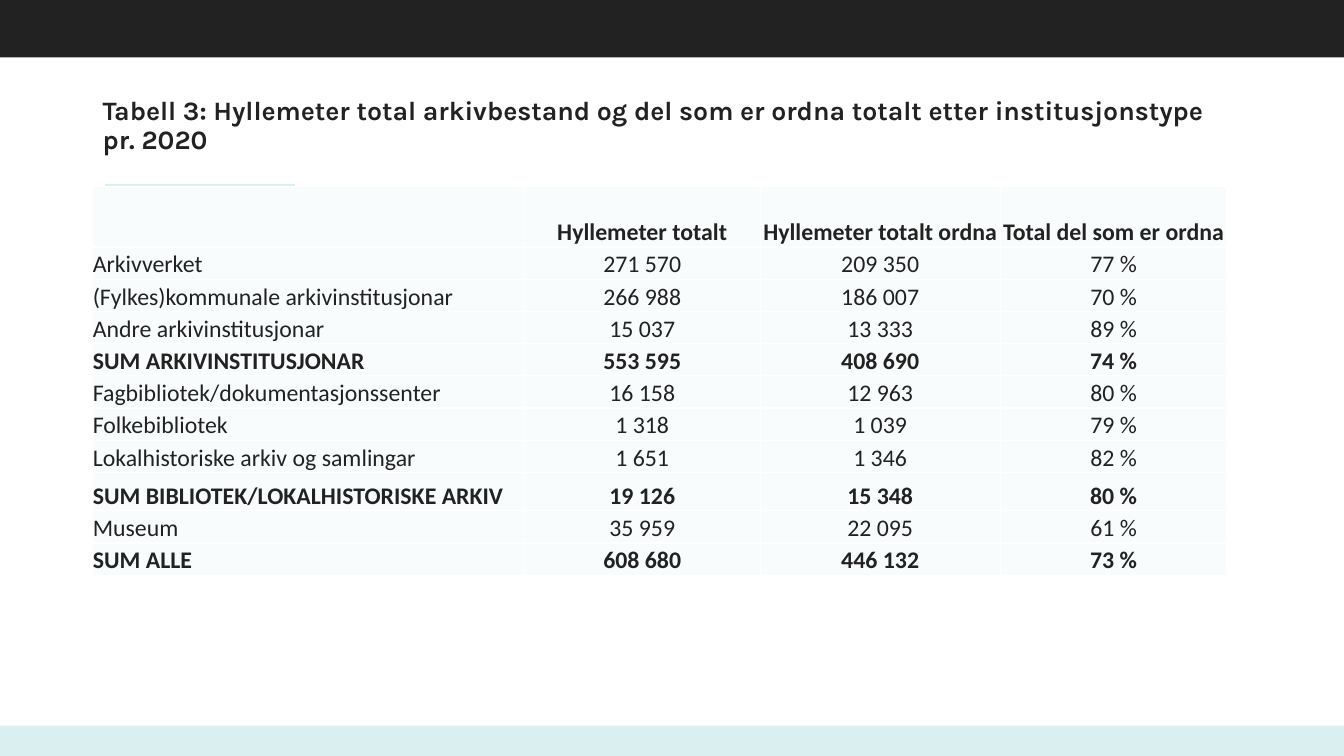
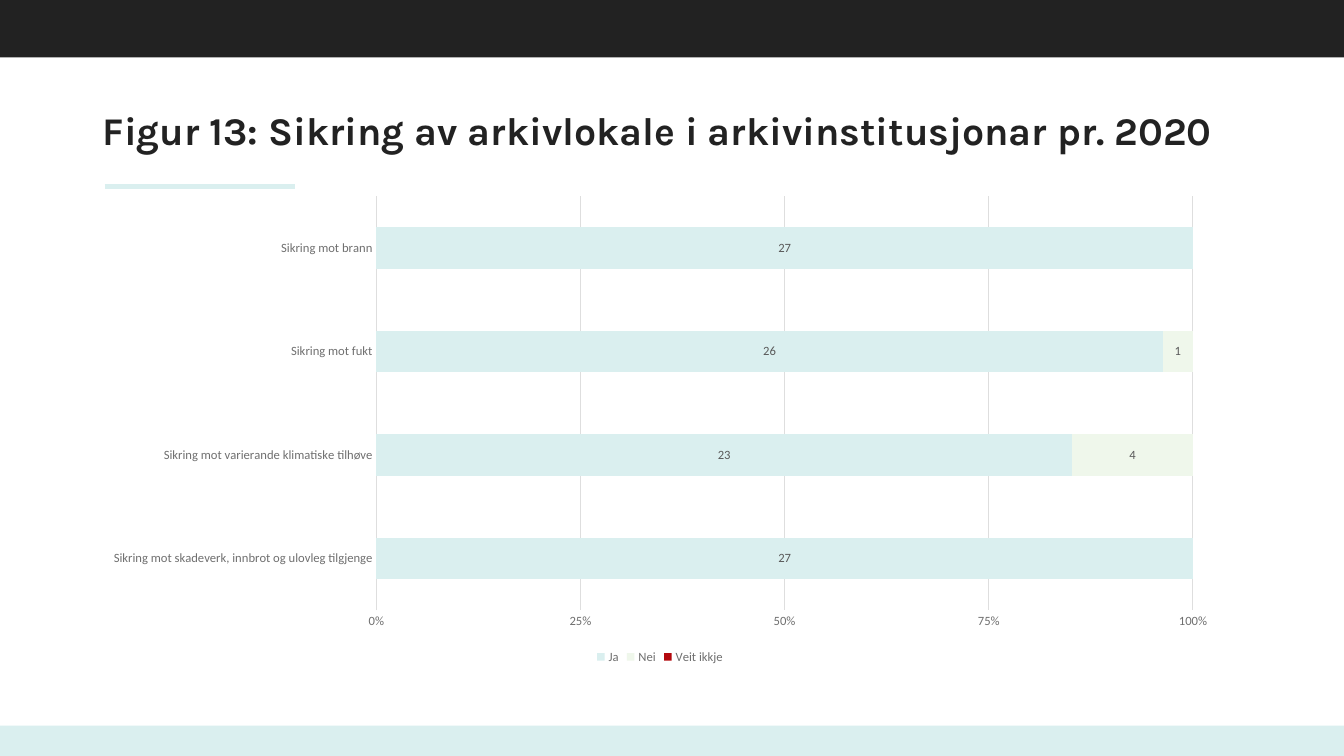
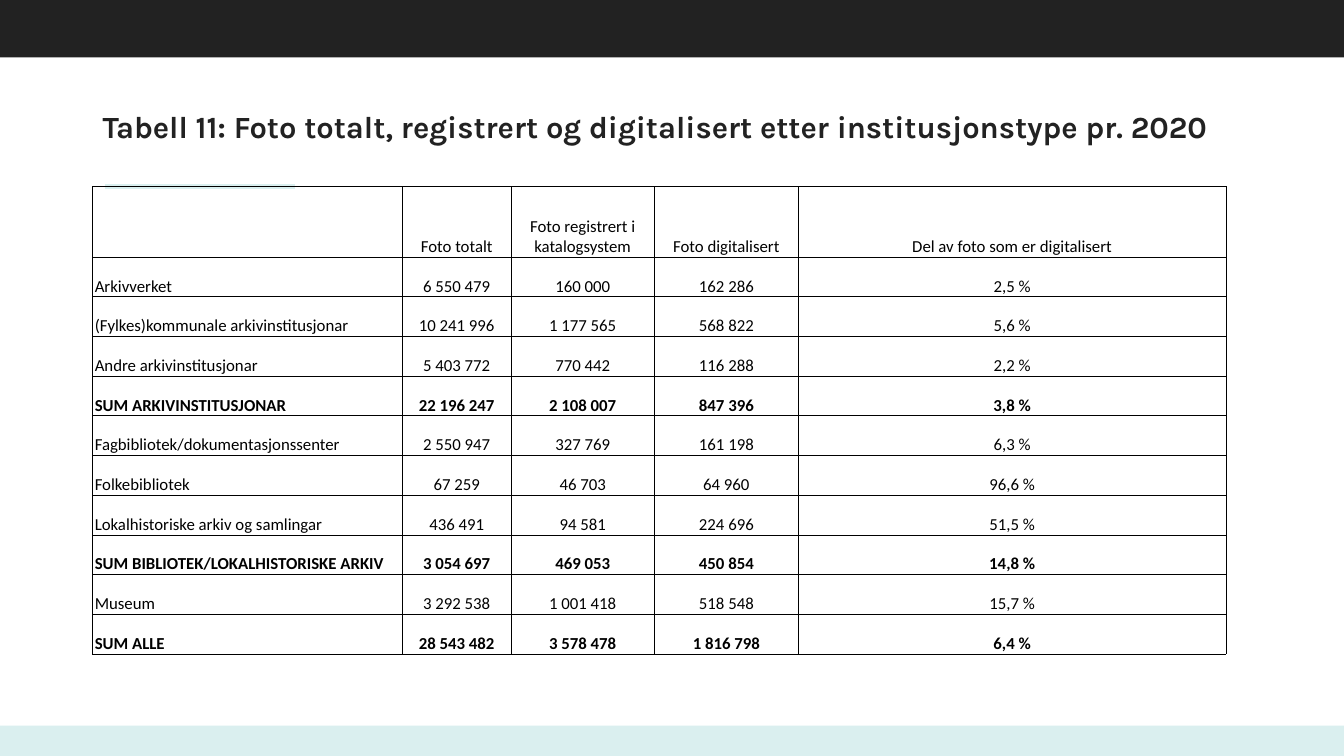
"""Build three slides on archive holdings: two tables and one stacked bar chart."""
from pptx import Presentation
from pptx.chart.data import CategoryChartData
from pptx.dml.color import RGBColor
from pptx.enum.chart import XL_CHART_TYPE, XL_LABEL_POSITION, XL_LEGEND_POSITION, XL_TICK_MARK
from pptx.enum.shapes import MSO_CONNECTOR, MSO_SHAPE
from pptx.enum.text import MSO_ANCHOR, PP_ALIGN
from pptx.oxml import parse_xml
from pptx.oxml.ns import nsdecls, qn
from pptx.util import Inches, Pt

INK = RGBColor(0x22, 0x22, 0x22)
BLACK = RGBColor(0x00, 0x00, 0x00)
WHITE = RGBColor(0xFF, 0xFF, 0xFF)
AQUA = RGBColor(0xDA, 0xEF, 0xEF)
PALE_AQUA = RGBColor(0xF8, 0xFC, 0xFC)
PALE_GREEN = RGBColor(0xEF, 0xF7, 0xEB)
RED = RGBColor(0xB3, 0x08, 0x0D)
AXIS_GREY = RGBColor(0x6F, 0x6F, 0x6F)
LABEL_GREY = RGBColor(0x59, 0x59, 0x59)
GRID_GREY = RGBColor(0xDE, 0xDE, 0xDE)

SLIDE_WIDTH, SLIDE_HEIGHT = 13.33, 7.5
LEFT, CONTENT_TOP = 0.92, 1.85
TOP_BAND, BOTTOM_BAND = 0.57, 0.3
TITLE_LINE_HEIGHT = 1.05

INSTITUTIONS = [
    "Arkivverket",
    "(Fylkes)kommunale arkivinstitusjonar",
    "Andre arkivinstitusjonar",
    "SUM ARKIVINSTITUSJONAR",
    "Fagbibliotek/dokumentasjonssenter",
    "Folkebibliotek",
    "Lokalhistoriske arkiv og samlingar",
    "SUM BIBLIOTEK/LOKALHISTORISKE ARKIV",
    "Museum",
    "SUM ALLE",
]

SHELF_TABLE = {
    "header": ["Hyllemeter totalt", "Hyllemeter totalt ordna", "Total del som er ordna"],
    "rows": [
        ("271 570", "209 350", "77 %"),
        ("266 988", "186 007", "70 %"),
        ("15 037", "13 333", "89 %"),
        ("553 595", "408 690", "74 %"),
        ("16 158", "12 963", "80 %"),
        ("1 318", "1 039", "79 %"),
        ("1 651", "1 346", "82 %"),
        ("19 126", "15 348", "80 %"),
        ("35 959", "22 095", "61 %"),
        ("608 680", "446 132", "73 %"),
    ],
    "widths": [4.28, 2.34, 2.38, 2.25],
    "heights": [0.6] + [0.32] * 7 + [0.38] + [0.32] * 2,
    "font": {"name": "Calibri", "size": Pt(17)},
    "color": INK,
    "bold_header": True,
    "fill": PALE_AQUA,
    "border": (WHITE, 1),
    "inset": 0,
}

PHOTO_TABLE = {
    "header": [
        "Foto totalt",
        "Foto registrert i katalogsystem",
        "Foto digitalisert",
        "Del av foto som er digitalisert",
    ],
    "rows": [
        ("6 550 479", "160 000", "162 286", "2,5 %"),
        ("10 241 996", "1 177 565", "568 822", "5,6 %"),
        ("5 403 772", "770 442", "116 288", "2,2 %"),
        ("22 196 247", "2 108 007", "847 396", "3,8 %"),
        ("2 550 947", "327 769", "161 198", "6,3 %"),
        ("67 259", "46 703", "64 960", "96,6 %"),
        ("436 491", "94 581", "224 696", "51,5 %"),
        ("3 054 697", "469 053", "450 854", "14,8 %"),
        ("3 292 538", "1 001 418", "518 548", "15,7 %"),
        ("28 543 482", "3 578 478", "1 816 798", "6,4 %"),
    ],
    "widths": [3.07, 1.08, 1.42, 1.43, 4.24],
    "heights": [0.7] + [(4.64 - 0.7) / len(INSTITUTIONS)] * len(INSTITUTIONS),
    "font": {"name": "Calibri", "size": Pt(12)},
    "color": BLACK,
    "bold_header": False,
    "fill": None,
    "border": (BLACK, 0.5),
    "inset": 0.02,
}

SECURITY_CATEGORIES = [
    "Sikring mot skadeverk, innbrot og ulovleg tilgjenge",
    "Sikring mot varierande klimatiske tilhøve",
    "Sikring mot fukt",
    "Sikring mot brann",
]
SECURITY_SERIES = [
    ("Ja", (27, 23, 26, 27), AQUA, True),
    ("Nei", (0, 4, 1, 0), PALE_GREEN, True),
    ("Veit ikkje", (0, 0, 0, 0), RED, False),
]
PLOT_LAYOUT = {"x": 0.25, "y": 0.02, "w": 0.72, "h": 0.86}


def apply(target, values):
    for name, value in values.items():
        setattr(target, name, value)


def format_font(font, color, **values):
    apply(font, values)
    font.color.rgb = color


def add_band(slide, top, height, color):
    band = slide.shapes.add_shape(
        MSO_SHAPE.RECTANGLE, 0, Inches(top), Inches(SLIDE_WIDTH), Inches(height)
    )
    band.shadow.inherit = False
    band.fill.solid()
    band.fill.fore_color.rgb = color
    band.line.fill.background()


def add_title(slide, text, size):
    box = slide.shapes.add_textbox(
        Inches(LEFT), Inches(TOP_BAND), Inches(11.5), Inches(CONTENT_TOP - TOP_BAND)
    )
    apply(box.text_frame, {
        "word_wrap": True,
        "vertical_anchor": MSO_ANCHOR.MIDDLE,
        "margin_left": Inches(0.1),
        "margin_right": Inches(0.1),
        "margin_top": Inches(0.05) + Pt(size * TITLE_LINE_HEIGHT),
        "margin_bottom": Inches(0.24),
    })
    paragraph = box.text_frame.paragraphs[0]
    paragraph.text = text
    paragraph.line_spacing = 0.9
    format_font(paragraph.font, INK, name="Karla", size=Pt(size), bold=True)


def add_base_slide(presentation, title, size):
    slide = presentation.slides.add_slide(presentation.slide_layouts[6])
    add_band(slide, SLIDE_HEIGHT - BOTTOM_BAND, BOTTOM_BAND, AQUA)
    add_band(slide, 0, TOP_BAND, INK)
    rule = slide.shapes.add_connector(
        MSO_CONNECTOR.STRAIGHT,
        Inches(1.04), Inches(CONTENT_TOP), Inches(2.93), Inches(CONTENT_TOP),
    )
    rule.line.color.rgb = AQUA
    rule.line.width = Pt(3)
    rule._element.spPr.append(parse_xml(f"<a:effectLst {nsdecls('a')}/>"))
    add_title(slide, title, size)
    return slide


def add_borders(cell, color, width):
    properties = cell._tc.get_or_add_tcPr()
    for side in ("lnL", "lnR", "lnT", "lnB"):
        properties.append(parse_xml(
            f'<a:{side} {nsdecls("a")} w="{Pt(width)}"><a:solidFill>'
            f'<a:srgbClr val="{color}"/></a:solidFill></a:{side}>'
        ))


def format_cell(cell, text, content, centred, bold):
    inset = Inches(content["inset"])
    apply(cell, {
        "vertical_anchor": MSO_ANCHOR.BOTTOM,
        "margin_left": inset,
        "margin_right": inset,
        "margin_top": inset,
        "margin_bottom": 0,
    })
    add_borders(cell, *content["border"])
    if content["fill"] is None:
        cell.fill.background()
    else:
        cell.fill.solid()
        cell.fill.fore_color.rgb = content["fill"]
    paragraph = cell.text_frame.paragraphs[0]
    paragraph.text = text
    paragraph.alignment = PP_ALIGN.CENTER if centred else PP_ALIGN.LEFT
    format_font(paragraph.font, content["color"], bold=bold, **content["font"])


def add_data_table(slide, content):
    grid = [["", *content["header"]]]
    grid += [[name, *values] for name, values in zip(INSTITUTIONS, content["rows"])]
    widths, heights = content["widths"], content["heights"]
    table = slide.shapes.add_table(
        len(grid), len(widths), Inches(LEFT), Inches(CONTENT_TOP),
        Inches(sum(widths)), Inches(sum(heights)),
    ).table
    apply(table, {"first_row": False, "horz_banding": False})
    for column, width in zip(table.columns, widths):
        column.width = Inches(width)
    for row_index, (row, height) in enumerate(zip(grid, heights)):
        table.rows[row_index].height = Inches(height)
        bold = content["bold_header"] if row_index == 0 else row[0].startswith("SUM")
        for column_index, text in enumerate(row):
            cell = table.cell(row_index, column_index)
            format_cell(cell, text, content, column_index > 0, bold)


def set_plot_layout(chart):
    plot_area = chart._chartSpace.chart.plotArea
    for layout in plot_area.findall(qn("c:layout")):
        plot_area.remove(layout)
    modes = "".join(f'<c:{axis}Mode val="edge"/>' for axis in "xy")
    places = "".join(f'<c:{name} val="{value}"/>' for name, value in PLOT_LAYOUT.items())
    plot_area.insert(0, parse_xml(
        f'<c:layout {nsdecls("c")}><c:manualLayout><c:layoutTarget val="inner"/>'
        f"{modes}{places}</c:manualLayout></c:layout>"
    ))


def format_axes(chart):
    for axis in (chart.category_axis, chart.value_axis):
        apply(axis, {
            "major_tick_mark": XL_TICK_MARK.NONE,
            "minor_tick_mark": XL_TICK_MARK.NONE,
        })
        format_font(axis.tick_labels.font, AXIS_GREY, name="Calibri", size=Pt(9))
    value_axis = chart.value_axis
    apply(value_axis, {"minimum_scale": 0, "maximum_scale": 1, "major_unit": 0.25})
    apply(value_axis.tick_labels, {"number_format": "0%", "number_format_is_linked": False})
    value_axis.format.line.fill.background()
    for line in (chart.category_axis.format.line, value_axis.major_gridlines.format.line):
        line.color.rgb = GRID_GREY
        line.width = Pt(0.75)


def add_security_chart(slide):
    data = CategoryChartData()
    data.categories = SECURITY_CATEGORIES
    for name, values, _, _ in SECURITY_SERIES:
        data.add_series(name, values)
    chart = slide.shapes.add_chart(
        XL_CHART_TYPE.BAR_STACKED_100, Inches(LEFT), Inches(CONTENT_TOP),
        Inches(11.25), Inches(4.78), data,
    ).chart
    apply(chart, {"has_title": False, "has_legend": True})
    format_font(chart.font, INK, name="Calibri", size=Pt(10))
    apply(chart.legend, {"position": XL_LEGEND_POSITION.BOTTOM, "include_in_layout": False})
    format_font(chart.legend.font, AXIS_GREY, name="Calibri", size=Pt(9))
    format_axes(chart)
    set_plot_layout(chart)
    plot = chart.plots[0]
    apply(plot, {"gap_width": 150, "overlap": 100, "vary_by_categories": False})
    for series, (_, _, color, labelled) in zip(plot.series, SECURITY_SERIES):
        series.format.fill.solid()
        series.format.fill.fore_color.rgb = color
        if labelled:
            labels = series.data_labels
            apply(labels, {
                "show_value": True,
                "position": XL_LABEL_POSITION.CENTER,
                "number_format": "0;;",
                "number_format_is_linked": False,
            })
            format_font(labels.font, LABEL_GREY, name="Calibri", size=Pt(9))


def main():
    presentation = Presentation()
    presentation.slide_width = Inches(SLIDE_WIDTH)
    presentation.slide_height = Inches(SLIDE_HEIGHT)
    shelf_slide = add_base_slide(
        presentation,
        "Tabell 3: Hyllemeter total arkivbestand og del som er ordna totalt "
        "etter institusjonstype pr. 2020",
        19,
    )
    add_data_table(shelf_slide, SHELF_TABLE)
    security_slide = add_base_slide(
        presentation, "Figur 13: Sikring av arkivlokale i arkivinstitusjonar pr. 2020", 28
    )
    add_security_chart(security_slide)
    photo_slide = add_base_slide(
        presentation,
        "Tabell 11: Foto totalt, registrert og digitalisert etter institusjonstype pr. 2020",
        22,
    )
    add_data_table(photo_slide, PHOTO_TABLE)
    presentation.save("out.pptx")


if __name__ == "__main__":
    main()
